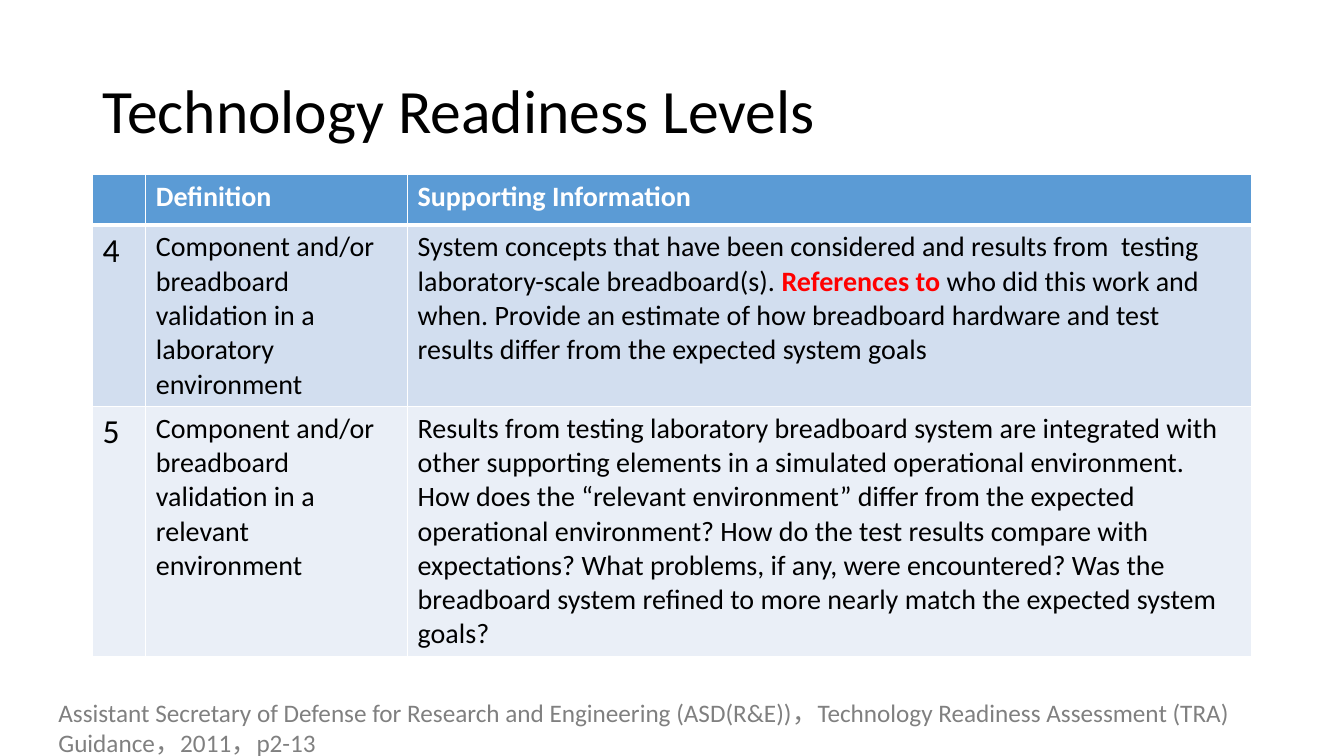
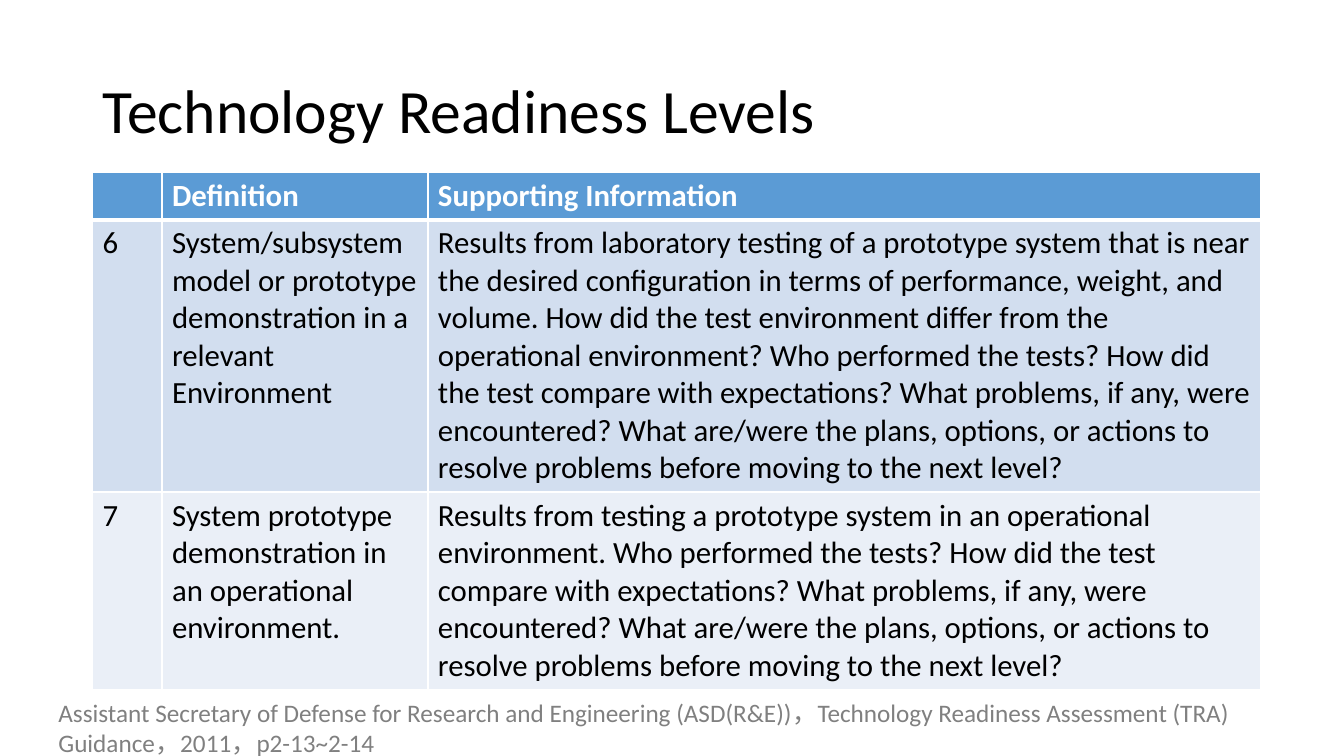
from pptx import Presentation
from pptx.dml.color import RGBColor
from pptx.enum.text import MSO_ANCHOR as Anchor, MSO_AUTO_SIZE as AutoSize
from pptx.oxml.ns import qn
from pptx.util import Pt
from lxml.etree import SubElement

WHITE = RGBColor(0xFF, 0xFF, 0xFF)
BLACK = RGBColor(0, 0, 0)
RED = RGBColor(0xFF, 0, 0)
GRAY = RGBColor(0x80, 0x80, 0x80)
HEADER_BLUE = RGBColor(0x5B, 0x9B, 0xD5)
ROW_BLUES = (RGBColor(0xD2, 0xDE, 0xEF), RGBColor(0xEA, 0xEF, 0xF7))

TITLE = "Technology Readiness Levels"
HEADINGS = ("", "Definition", "Supporting Information")
SOURCE = ("Assistant Secretary of Defense for Research and Engineering (ASD(R&E))，"
          "Technology Readiness Assessment (TRA) Guidance，2011，")


class Deck:
    """Shared style and the slide being built."""
    FONT = "Calibri"
    LEFT = 66.2

    def __init__(self):
        self.prs = Presentation()
        self.prs.slide_width, self.prs.slide_height = Pt(960), Pt(540)
        self.slide = None

    def new_slide(self):
        self.slide = self.prs.slides.add_slide(self.prs.slide_layouts[6])

    def style(self, paragraph, size, color, bold=False):
        font = paragraph.font
        font.name, font.size, font.bold = self.FONT, Pt(size), bold
        font.color.rgb = color

    def text(self, wording, box, size, color):
        frame = self.slide.shapes.add_textbox(*map(Pt, box)).text_frame
        frame.word_wrap = True
        frame.text = wording
        self.style(frame.paragraphs[0], size, color)
        return frame

    def title(self, wording):
        frame = self.text(wording, (self.LEFT, 28.8, 828, 104.4), 44, BLACK)
        frame.vertical_anchor = Anchor.MIDDLE
        frame.paragraphs[0].line_spacing = 0.9

    def footer(self, pages):
        frame = self.text(SOURCE + pages, (34.6, 494.6, 896.4, 51), 18, GRAY)
        frame.auto_size = AutoSize.SHAPE_TO_FIT_TEXT

    def borders(self, cell, top, bottom):
        properties = cell._tc.get_or_add_tcPr()
        for side, width in (("L", 1), ("R", 1), ("T", top), ("B", bottom)):
            line = SubElement(properties, qn(f"a:ln{side}"), w=str(Pt(width)))
            fill = SubElement(line, qn("a:solidFill"))
            SubElement(fill, qn("a:srgbClr"), val=str(WHITE))

    def cell(self, cell, wording, size, color, bold=False):
        """Lines become paragraphs; text between asterisks is emphasised."""
        cell.text = wording.replace("*", "")
        for paragraph, line in zip(cell.text_frame.paragraphs, wording.split("\n")):
            self.style(paragraph, size, color, bold)
            parts = line.split("*")
            if len(parts) > 1:
                paragraph.clear()
                for index, part in enumerate(parts):
                    run = paragraph.add_run()
                    run.text = part
                    if index % 2:
                        run.font.bold = True
                        run.font.color.rgb = RED

    def table(self, top, widths, heights, levels, size, level_size):
        table = self.slide.shapes.add_table(
            len(heights), len(widths), Pt(self.LEFT), Pt(top),
            Pt(sum(widths)), Pt(sum(heights))).table
        for column, width in zip(table.columns, widths):
            column.width = Pt(width)
        for r, (height, wordings) in enumerate(zip(heights, [HEADINGS, *levels])):
            table.rows[r].height = Pt(height)
            for c, wording in enumerate(wordings):
                cell = table.cell(r, c)
                self.borders(cell, 3 if r == 1 else 1, 3 if r == 0 else 1)
                cell.fill.solid()
                cell.fill.fore_color.rgb = ROW_BLUES[r - 1] if r else HEADER_BLUE
                if r == 0:
                    self.cell(cell, wording, size, WHITE, bold=True)
                else:
                    self.cell(cell, wording, size if c else level_size, BLACK)


# Content of each slide
SLIDES = (
    dict(
        pages="p2-13",
        table=dict(
            top=124.8, widths=(38, 187, 603), heights=(36, 129.5, 178.5),
            size=20, level_size=24,
            levels=(
                ("4",
                 "Component and/or breadboard validation in a laboratory environment",
                 "System concepts that have been considered and results from  testing "
                 "laboratory-scale breadboard(s). *References to *who did this work and "
                 "when. Provide an estimate of how breadboard hardware and test results "
                 "differ from the expected system goals"),
                ("5",
                 "Component and/or breadboard validation in a relevant environment",
                 "Results from testing laboratory breadboard system are integrated with "
                 "other supporting elements in a simulated operational environment. How "
                 "does the “relevant environment” differ from the expected operational "
                 "environment? How do the test results compare with expectations? What "
                 "problems, if any, were encountered? Was the breadboard system refined "
                 "to more nearly match the expected system goals?"),
            ))),
    dict(
        pages="p2-13~2-14",
        table=dict(
            top=123.3, widths=(49.5, 190, 594.5), heights=(33, 194.5, 141.5),
            size=22, level_size=22,
            levels=(
                ("6",
                 "System/subsystem model or prototype demonstration in a relevant "
                 "Environment",
                 "Results from laboratory testing of a prototype system that is near the "
                 "desired configuration in terms of performance, weight, and volume. How "
                 "did the test environment differ from the operational environment? Who "
                 "performed the tests? How did the test compare with expectations? What "
                 "problems, if any, were encountered? What are/were the plans, options, "
                 "or actions to resolve problems before moving to the next level?"),
                ("7",
                 "System prototype\ndemonstration in an operational environment.",
                 "Results from testing a prototype system in an operational environment. "
                 "Who performed the tests? How did the test compare with expectations? "
                 "What problems, if any, were encountered? What are/were the plans, "
                 "options, or actions to resolve problems before moving to the next "
                 "level?"),
            ))),
)


def main():
    deck = Deck()
    for content in SLIDES:
        deck.new_slide()
        deck.title(TITLE)
        deck.table(**content["table"])
        deck.footer(content["pages"])
    deck.prs.save("out.pptx")


if __name__ == "__main__":
    main()
